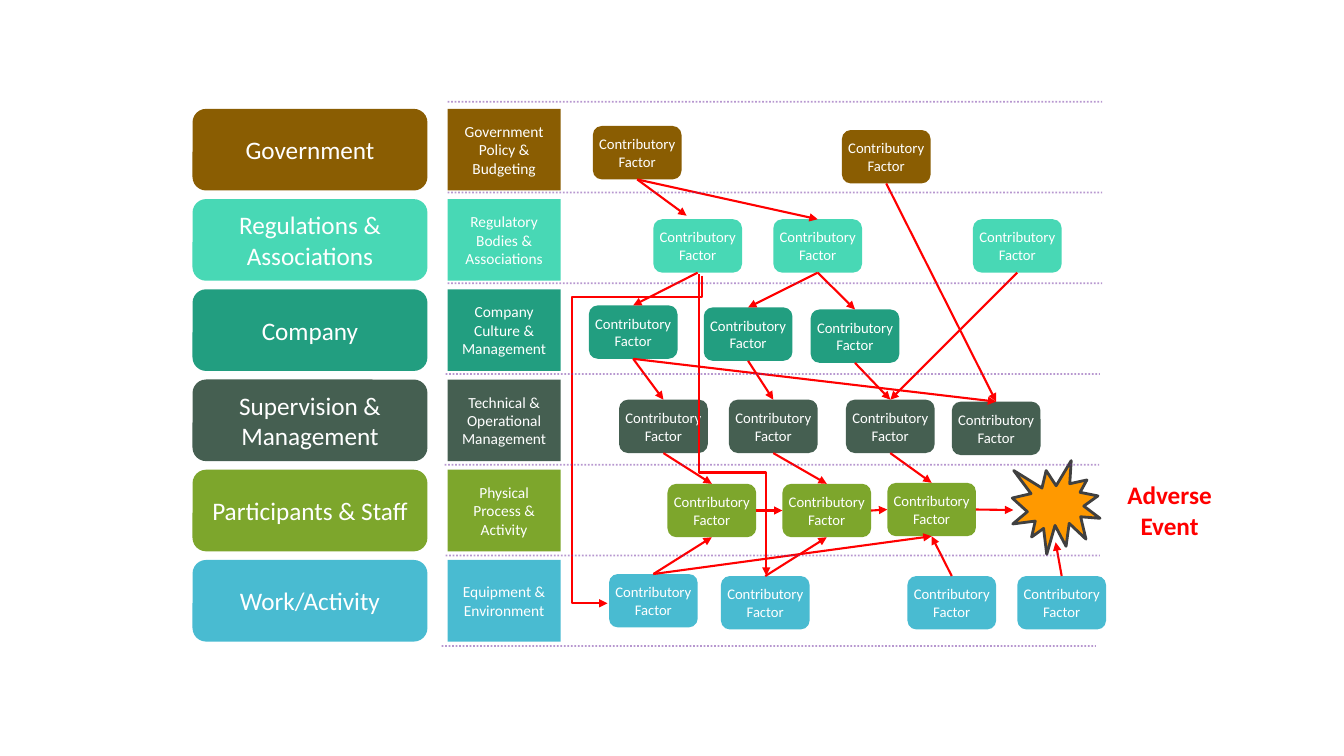
import pptx
import pptx.util
import pptx.dml.color
import pptx.enum.dml
import pptx.enum.shapes
import pptx.enum.text
import pptx.oxml.ns
import lxml.etree
from dataclasses import dataclass

SHAPE = pptx.enum.shapes.MSO_SHAPE
LINE = pptx.enum.shapes.MSO_CONNECTOR
TOP, LEFT, BOTTOM, RIGHT = range(4)


@dataclass
class Theme:
    font: str = "Calibri"
    light: str = "FFFFFF"
    alert: str = "FF0000"
    burst: str = "FF9900"
    edge: str = "404040"
    rule: str = "7030A0"
    level: float = 18
    label: float = 11
    factor: float = 10.5


THEME = Theme()

# Grid: six rows of equal pitch, a level column and a label column
ROW_TOP, PITCH, ROW_H = 1.08, 0.895, 0.81
LEVEL_X, LEVEL_W = 1.91, 2.33
LABEL_X, LABEL_W = 4.44, 1.12
FACTOR_W, FACTOR_H = 0.88, 0.53
RULE_TOP, RULE_GAP, RULE_W = 1.01, 0.9, 6.49
RULE_LEFTS = [4.44, 4.44, 4.44, 4.42, 4.41, 4.42, 4.38]

# Level, label, colour, and factors as (left, offset from the row's top)
ROWS = [
    ("Government", "Government Policy & Budgeting", "8A5D02",
     [(5.88, 0.17), (8.35, 0.21)]),
    ("Regulations & Associations", "Regulatory Bodies & Associations", "48D8B5",
     [(6.48, 0.2), (7.67, 0.2), (9.65, 0.2)]),
    ("Company", "Company Culture & Management", "229E80",
     [(5.84, 0.16), (6.98, 0.18), (8.04, 0.2)]),
    ("Supervision & Management", "Technical & Operational Management", "455F51",
     [(6.14, 0.2), (7.23, 0.2), (8.39, 0.2), (9.44, 0.22)]),
    ("Participants & Staff", "Physical Process & Activity", "7DA62C",
     [(6.62, 0.14), (7.76, 0.14), (8.8, 0.13)]),
    ("Work/Activity", "Equipment & Environment", "49BBD1",
     [(6.04, 0.14), (7.15, 0.16), (9, 0.16), (10.09, 0.16)]),
]

# Arrows between factors, each named by (row, place in row)
DOWN = [
    ((0, 0), (1, 1)), ((0, 1), (3, 3)),
    ((1, 0), (2, 0)), ((1, 1), (2, 1)), ((1, 1), (2, 2)), ((1, 2), (3, 2)),
    ((2, 0), (3, 0)), ((2, 0), (3, 3)), ((2, 1), (3, 1)), ((2, 2), (3, 2)),
    ((3, 0), (4, 0)), ((3, 1), (4, 1)), ((3, 2), (4, 2)),
]
UP = [((5, 0), (4, 0)), ((5, 0), (4, 2)), ((5, 1), (4, 1)), ((5, 2), (4, 2))]
ACROSS = [((4, 0), (4, 1)), ((4, 1), (4, 2))]
# Arrows that end at a free point: factor, side, point
FREE = [((0, 0), BOTTOM, (6.81, 2.14)), ((4, 2), RIGHT, (10.05, 5.06)),
        ((5, 3), TOP, (10.47, 5.38))]
# Elbows before rotation: preset, start, end, turn in degrees, bends
ELBOWS = [
    ("bentConnector4", (4.87, 3.89), (8.12, 4.83), 90, [0.066, 1.378]),
    ("bentConnector3", (8.76, 3.88), (5.77, 4.55), 270, [0.658]),
]


def inch(*sizes):
    return [pptx.util.Inches(s) for s in sizes]


def rgb(code):
    return pptx.dml.color.RGBColor.from_string(code)


def sub(node, tag, **attrs):
    item = lxml.etree.SubElement(node, pptx.oxml.ns.qn(tag))
    for key, value in attrs.items():
        item.set(key, str(value))
    return item


def write(frame, text, size, color, bold=False):
    frame.word_wrap = True
    para = frame.paragraphs[0]
    para.alignment = pptx.enum.text.PP_ALIGN.CENTER
    run = para.add_run()
    run.text = text
    run.font.name = THEME.font
    run.font.size = pptx.util.Pt(size)
    run.font.bold = bold
    run.font.color.rgb = rgb(color)


def block(slide, kind, area, fill):
    shape = slide.shapes.add_shape(kind, *inch(*area))
    shape.shadow.inherit = False
    shape.fill.solid()
    shape.fill.fore_color.rgb = rgb(fill)
    shape.line.fill.background()
    return shape


def card(slide, kind, area, fill, text, size):
    shape = block(slide, kind, area, fill)
    shape.text_frame.vertical_anchor = pptx.enum.text.MSO_ANCHOR.MIDDLE
    write(shape.text_frame, text, size, THEME.light)
    return shape


def factor(slide, left, top, fill):
    shape = card(slide, SHAPE.ROUNDED_RECTANGLE, (left, top, FACTOR_W, FACTOR_H),
                 fill, "Contributory Factor", THEME.factor)
    shape.text_frame.margin_left = shape.text_frame.margin_right = 0
    return shape


def stroke(slide, kind, start, end, color, width):
    line = slide.shapes.add_connector(kind, *inch(*start, *end))
    line.line.color.rgb = rgb(color)
    line.line.width = pptx.util.Pt(width)
    sub(line._element.spPr, "a:effectLst")
    return line


def arrow(slide, start=(0, 0), end=(1, 1), kind=LINE.STRAIGHT):
    line = stroke(slide, kind, start, end, THEME.alert, 1.5)
    sub(line.line._get_or_add_ln(), "a:tailEnd", type="triangle")
    return line


def join(slide, nodes, pairs, out, into):
    for start, end in pairs:
        line = arrow(slide)
        line.begin_connect(nodes[start], out)
        line.end_connect(nodes[end], into)


def elbow(slide, preset, start, end, turn, bends):
    props = arrow(slide, start, end, LINE.ELBOW)._element.spPr
    props.find(pptx.oxml.ns.qn("a:xfrm")).set("rot", str(turn * 60000))
    geom = props.find(pptx.oxml.ns.qn("a:prstGeom"))
    geom.set("prst", preset)
    guides = geom.find(pptx.oxml.ns.qn("a:avLst"))
    for num, bend in enumerate(bends, 1):
        sub(guides, "a:gd", name=f"adj{num}", fmla=f"val {round(bend * 100000)}")


def rule(slide, left, top):
    line = stroke(slide, LINE.STRAIGHT, (left, top), (left + RULE_W, top),
                  THEME.rule, 1.25)
    line.line.dash_style = pptx.enum.dml.MSO_LINE.ROUND_DOT
    tint = next(line.line._get_or_add_ln().iter(pptx.oxml.ns.qn("a:srgbClr")))
    sub(tint, "a:alpha", val=50000)


def event(slide):
    burst = block(slide, SHAPE.EXPLOSION1, (10.04, 4.57, 0.87, 0.93), THEME.burst)
    burst.line.color.rgb = rgb(THEME.edge)
    burst.line.width = pptx.util.Pt(2)
    box = slide.shapes.add_textbox(*inch(11.05, 4.71, 1.1, 0.71))
    box.text_frame.auto_size = pptx.enum.text.MSO_AUTO_SIZE.SHAPE_TO_FIT_TEXT
    write(box.text_frame, "Adverse Event", THEME.level, THEME.alert, True)


def main():
    deck = pptx.Presentation()
    deck.slide_width, deck.slide_height = inch(13.33, 7.5)
    slide = deck.slides.add_slide(deck.slide_layouts[6])

    # Levels, labels and factors
    nodes = {}
    for row, (level, label, fill, spots) in enumerate(ROWS):
        top = ROW_TOP + row * PITCH
        card(slide, SHAPE.ROUNDED_RECTANGLE, (LEVEL_X, top, LEVEL_W, ROW_H),
             fill, level, THEME.level)
        card(slide, SHAPE.RECTANGLE, (LABEL_X, top, LABEL_W, ROW_H),
             fill, label, THEME.label)
        for place, (left, drop) in enumerate(spots):
            nodes[row, place] = factor(slide, left, top + drop, fill)

    # Arrows
    join(slide, nodes, DOWN, BOTTOM, TOP)
    join(slide, nodes, UP, TOP, BOTTOM)
    join(slide, nodes, ACROSS, RIGHT, LEFT)
    for start, side, point in FREE:
        arrow(slide, end=point).begin_connect(nodes[start], side)
    for bent in ELBOWS:
        elbow(slide, *bent)

    # Outcome and row rules
    event(slide)
    for num, left in enumerate(RULE_LEFTS):
        rule(slide, left, RULE_TOP + num * RULE_GAP)

    deck.save("out.pptx")


if __name__ == "__main__":
    main()
